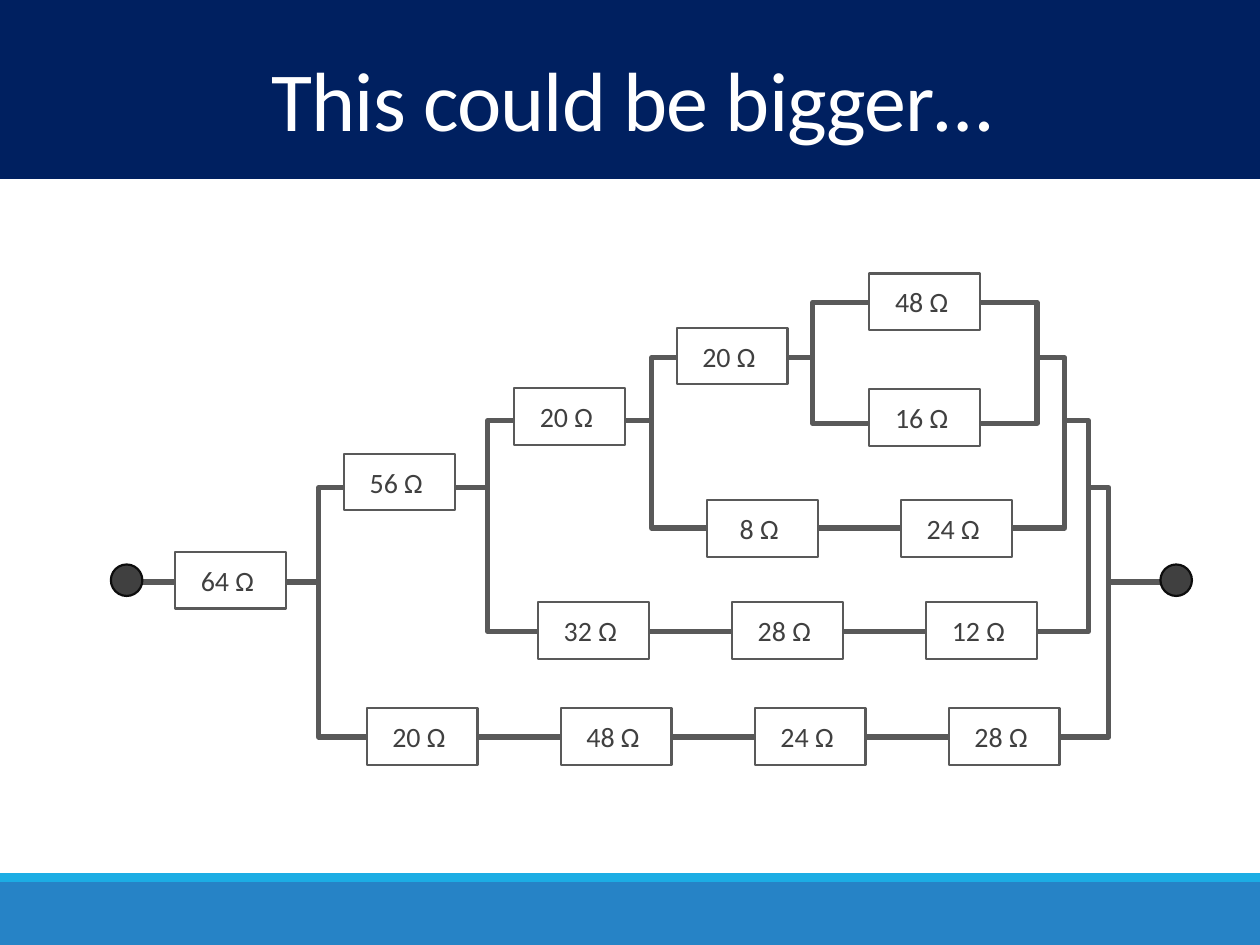
"""Build a slide showing a nested series and parallel resistor circuit."""
from dataclasses import dataclass

from lxml.etree import SubElement
from pptx import Presentation
from pptx.dml.color import RGBColor
from pptx.enum.shapes import MSO_CONNECTOR, MSO_SHAPE
from pptx.enum.text import MSO_ANCHOR, PP_ALIGN
from pptx.oxml.ns import qn
from pptx.util import Inches, Pt


@dataclass(frozen=True)
class Theme:
    font: str = "Calibri"
    title_size: float = 48
    label_size: float = 16
    wire_width: float = 3
    outline_width: float = 1.25
    white: str = "FFFFFF"
    navy: str = "002060"
    sky: str = "1CADE4"
    blue: str = "2683C6"
    wire: str = "595959"
    dark: str = "404040"
    black: str = "0D0D0D"


THEME = Theme()
WIDTH, HEIGHT = 10, 7.5
TITLE = "This could be bigger…"
BANDS = [
    (7, 0.5, THEME.blue),
    (6.93, 0.07, THEME.sky),
    (0, 1.42, THEME.navy),
]
MAIN_WIRE = (0.98, 9.32, 4.62)
TERMINAL_LEFTS = (0.88, 9.21)
TERMINAL_TOP, TERMINAL_SIZE = 4.48, 0.25
LOOPS = [
    (2.53, 3.87, 6.27, 1.98),
    (3.87, 3.34, 4.77, 1.67),
    (5.17, 2.84, 3.28, 1.35),
    (6.45, 2.4, 1.78, 0.96),
]
RESISTOR_WIDTH, RESISTOR_HEIGHT, RESISTOR_PITCH = 0.88, 0.45, 1.54
BRANCHES = [
    (1.39, 4.38, [64]),
    (2.73, 3.6, [56]),
    (4.08, 3.08, [20]),
    (5.37, 2.6, [20]),
    (6.9, 2.17, [48]),
    (6.9, 3.09, [16]),
    (4.27, 4.78, [32, 28, 12]),
    (5.61, 3.97, [8, 24]),
    (2.91, 5.62, [20, 48, 24, 28]),
]


def color(value):
    return RGBColor.from_string(value)


def add_box(shapes, kind, box, fill, line=None, line_width=0):
    shape = shapes.add_shape(kind, *map(Inches, box))
    shape.shadow.inherit = False
    shape.fill.solid()
    shape.fill.fore_color.rgb = color(fill)
    if line:
        shape.line.color.rgb = color(line)
        shape.line.width = Pt(line_width)
    else:
        shape.line.fill.background()
    return shape


def add_text(shape, text, size, text_color):
    frame = shape.text_frame
    frame.word_wrap = True
    frame.vertical_anchor = MSO_ANCHOR.MIDDLE
    paragraph = frame.paragraphs[0]
    paragraph.alignment = PP_ALIGN.CENTER
    run = paragraph.add_run()
    run.text = text
    run.font.name = THEME.font
    run.font.size = Pt(size)
    run.font.color.rgb = color(text_color)
    return paragraph, run


def add_header(slide):
    for top, height, fill in BANDS:
        band = add_box(slide.shapes, MSO_SHAPE.RECTANGLE, (0, top, WIDTH, height), fill)
    title = slide.shapes.title
    band.element.addnext(title.element)
    title.left, title.top, title.width, title.height = map(Inches, (0.03, 0.42, 9.97, 0.84))
    paragraph, run = add_text(title, TITLE, THEME.title_size, THEME.white)
    paragraph.line_spacing = 0.85
    run.font._element.set("spc", "-50")


def add_circuit(slide):
    shapes = slide.shapes.add_group_shape().shapes
    start, end, level = MAIN_WIRE
    wire = shapes.add_connector(
        MSO_CONNECTOR.STRAIGHT, *map(Inches, (start, level, end, level))
    )
    wire.line.color.rgb = color(THEME.wire)
    wire.line.width = Pt(THEME.wire_width)
    SubElement(wire.element.spPr, qn("a:effectLst"))

    for loop in LOOPS:
        add_box(shapes, MSO_SHAPE.RECTANGLE, loop, THEME.white, THEME.wire, THEME.wire_width)
    for left in TERMINAL_LEFTS:
        box = (left, TERMINAL_TOP, TERMINAL_SIZE, TERMINAL_SIZE)
        add_box(shapes, MSO_SHAPE.OVAL, box, THEME.dark, THEME.black, THEME.outline_width)
    for left, top, values in BRANCHES:
        for column, value in enumerate(values):
            box = (left + column * RESISTOR_PITCH, top, RESISTOR_WIDTH, RESISTOR_HEIGHT)
            resistor = add_box(
                shapes, MSO_SHAPE.RECTANGLE, box, THEME.white, THEME.wire, THEME.outline_width
            )
            add_text(resistor, f"{value} Ω ", THEME.label_size, THEME.dark)


def main():
    presentation = Presentation()
    presentation.slide_width, presentation.slide_height = Inches(WIDTH), Inches(HEIGHT)
    slide = presentation.slides.add_slide(presentation.slide_layouts[5])
    add_header(slide)
    add_circuit(slide)
    presentation.save("out.pptx")


if __name__ == "__main__":
    main()
